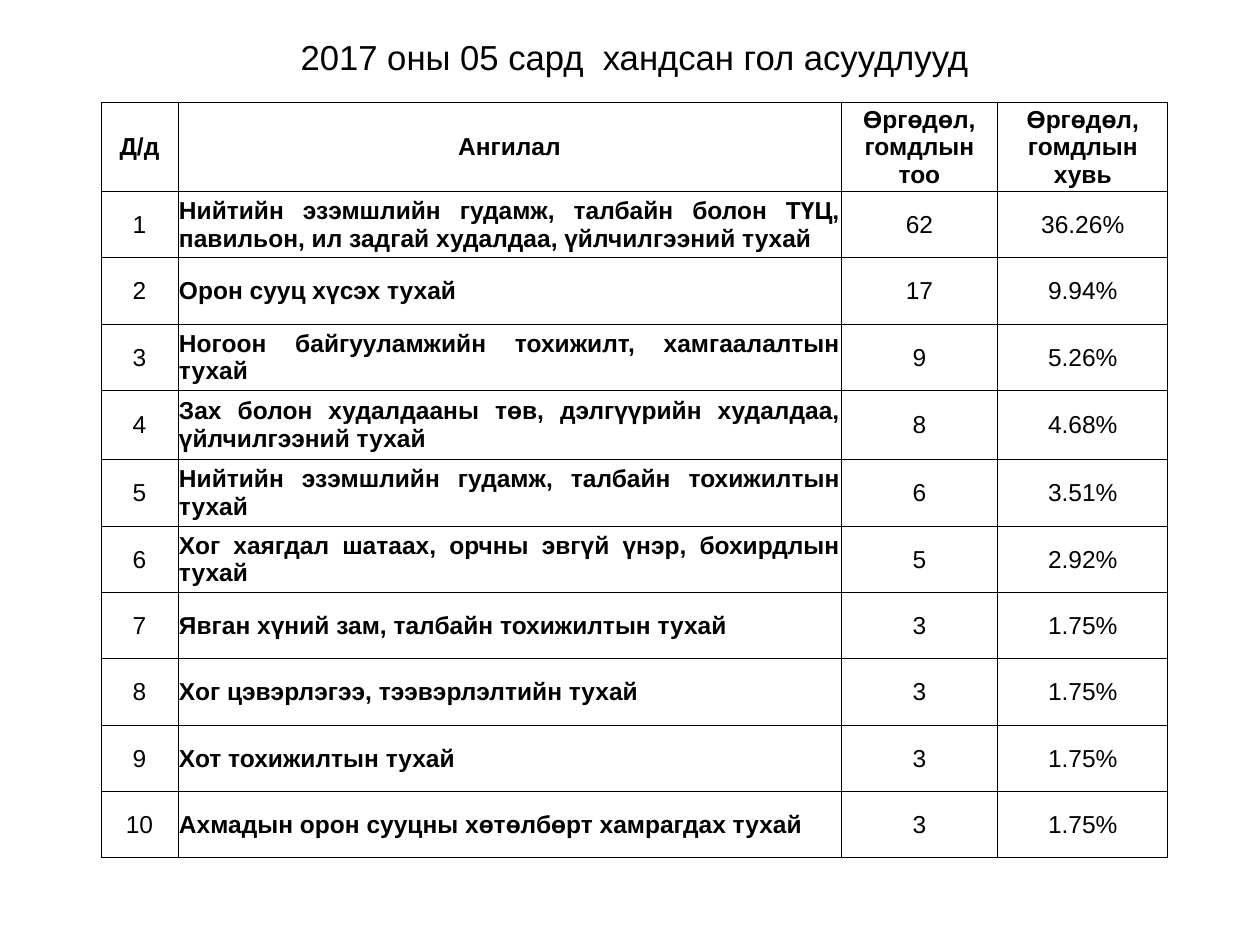
from lxml.etree import SubElement
from pptx import Presentation
from pptx.dml.color import RGBColor
from pptx.enum.text import MSO_ANCHOR, PP_ALIGN
from pptx.oxml.ns import qn
from pptx.util import Emu, Pt

EMU_PER_PX = 914400 // 126
BLACK, WHITE = "000000", "FFFFFF"
TABLE_LEFT, TABLE_TOP = 101, 102
COLUMN_WIDTHS = [77, 663, 157, 170]
ROW_HEIGHTS = [84, 66, 67, 66, 69, 67, 66, 66, 67, 66, 66]
BORDER_WIDTH = Pt(0.5)
CATEGORY_COLUMN = 1

TITLE = "2017 оны 05 сард  хандсан гол асуудлууд"
HEADERS = ["Д/д", "Ангилал", "Өргөдөл, гомдлын тоо", "Өргөдөл, гомдлын хувь"]
ISSUES = [
    ("Нийтийн эзэмшлийн гудамж, талбайн болон ТҮЦ, павильон, ил задгай "
     "худалдаа, үйлчилгээний тухай", "62", "36.26%"),
    ("Орон сууц хүсэх тухай", "17", "9.94%"),
    ("Ногоон байгууламжийн тохижилт, хамгаалалтын тухай", "9", "5.26%"),
    ("Зах болон худалдааны төв, дэлгүүрийн худалдаа, үйлчилгээний тухай",
     "8", "4.68%"),
    ("Нийтийн эзэмшлийн гудамж, талбайн тохижилтын тухай", "6", "3.51%"),
    ("Хог хаягдал шатаах, орчны эвгүй үнэр, бохирдлын тухай", "5", "2.92%"),
    ("Явган хүний зам, талбайн тохижилтын тухай", "3", "1.75%"),
    ("Хог цэвэрлэгээ, тээвэрлэлтийн тухай", "3", "1.75%"),
    ("Хот тохижилтын тухай", "3", "1.75%"),
    ("Ахмадын орон сууцны хөтөлбөрт хамрагдах тухай", "3", "1.75%"),
]


def px(length):
    return Emu(length * EMU_PER_PX)


def color(hex_value):
    return RGBColor.from_string(hex_value)


def set_attributes(target, values):
    for attribute, value in values.items():
        setattr(target, attribute, value)


def write_text(frame, text, size, bold=False, align=PP_ALIGN.CENTER):
    paragraph = frame.paragraphs[0]
    paragraph.alignment = align
    run = paragraph.add_run()
    run.text = text
    set_attributes(run.font, {"name": "Arial", "size": Pt(size), "bold": bold})
    run.font.color.rgb = color(BLACK)


def add_title(slide):
    frame = slide.shapes.add_textbox(
        px(TABLE_LEFT), px(16), px(sum(COLUMN_WIDTHS)), px(82)).text_frame
    set_attributes(frame, {"word_wrap": True,
                           "vertical_anchor": MSO_ANCHOR.MIDDLE})
    write_text(frame, TITLE, 19.8)


def add_borders(cell):
    properties = cell._tc.get_or_add_tcPr()
    for side in ("a:lnL", "a:lnR", "a:lnT", "a:lnB"):
        line = SubElement(properties, qn(side), w=str(BORDER_WIDTH))
        fill = SubElement(line, qn("a:solidFill"))
        SubElement(fill, qn("a:srgbClr"), val=BLACK)


def format_cell(cell):
    set_attributes(cell, {
        "margin_left": px(1), "margin_right": px(1),
        "margin_top": px(1), "margin_bottom": 0,
        "vertical_anchor": MSO_ANCHOR.MIDDLE,
    })
    add_borders(cell)
    cell.fill.solid()
    cell.fill.fore_color.rgb = color(WHITE)


def add_issue_table(slide):
    rows = [HEADERS] + [(str(number), *issue)
                        for number, issue in enumerate(ISSUES, 1)]
    table = slide.shapes.add_table(
        len(rows), len(HEADERS), px(TABLE_LEFT), px(TABLE_TOP),
        px(sum(COLUMN_WIDTHS)), px(sum(ROW_HEIGHTS))).table
    set_attributes(table, {"first_row": False, "horz_banding": False})
    for column, width in zip(table.columns, COLUMN_WIDTHS):
        column.width = px(width)
    for row, height in zip(table.rows, ROW_HEIGHTS):
        row.height = px(height)
    for row_index, texts in enumerate(rows):
        for column_index, text in enumerate(texts):
            is_header = row_index == 0
            is_category = column_index == CATEGORY_COLUMN
            justified = is_category and not is_header
            cell = table.cell(row_index, column_index)
            format_cell(cell)
            write_text(cell.text_frame, text, 14, is_header or is_category,
                       PP_ALIGN.JUSTIFY if justified else PP_ALIGN.CENTER)


def main():
    presentation = Presentation()
    set_attributes(presentation, {"slide_width": px(1260),
                                  "slide_height": px(945)})
    slide = presentation.slides.add_slide(presentation.slide_layouts[6])
    add_title(slide)
    add_issue_table(slide)
    presentation.save("out.pptx")


if __name__ == "__main__":
    main()
